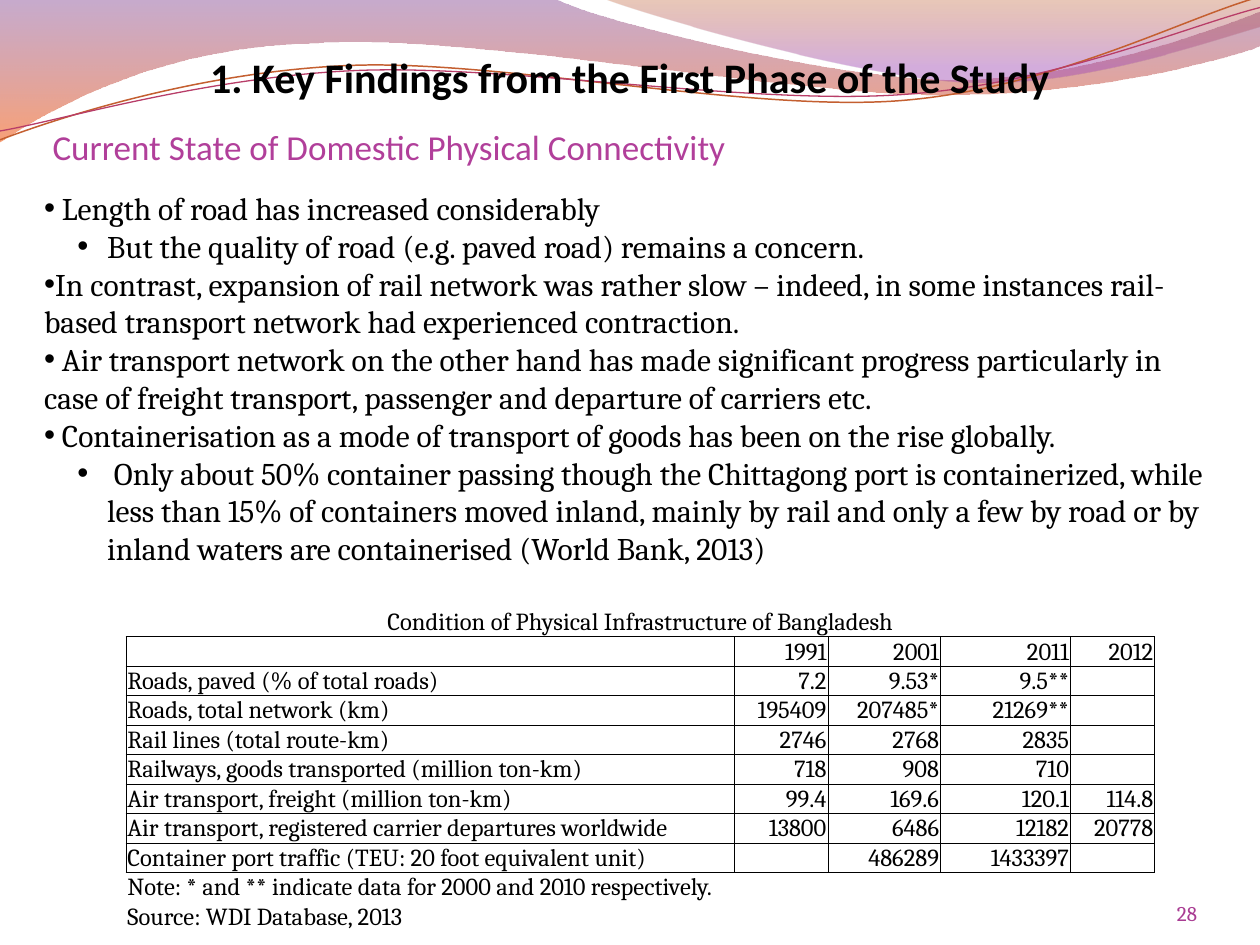
"""Build the slide on the state of domestic physical connectivity."""
import math

from lxml import etree
from pptx import Presentation
from pptx import util as u
from pptx.dml.color import RGBColor
from pptx.enum import text
from pptx.oxml.ns import qn

rgb = RGBColor.from_string
AL, ANC = text.PP_ALIGN, text.MSO_ANCHOR

prs = Presentation()
prs.slide_width, prs.slide_height = u.Cm(25.4), u.Cm(19.05)
s = prs.slides.add_slide(prs.slide_layouts[6])


def draw_outline(steps, close, turn=0, center=(0, 0)):
    """Draw points (2 numbers) and cubic curves (6 numbers), in 1/100 inch."""
    unit, (cx, cy) = u.Cm(0.0254), center
    cos, sin = math.cos(math.radians(turn)), math.sin(math.radians(turn))
    steps = [[((cx + (x - cx) * cos + (y - cy) * sin) * unit,
               (cy - (x - cx) * sin + (y - cy) * cos) * unit)
              for x, y in zip(step[::2], step[1::2])] for step in steps]
    ends = [step[-1] for step in steps]
    fb = s.shapes.build_freeform(*ends[0])
    fb.add_line_segments(ends[1:], close=close)
    sp = fb.convert_to_shape()
    path = sp._element.spPr.find(".//" + qn("a:path"))
    for node, step in zip(list(path), steps):
        if len(step) == 3:
            curve = etree.Element(qn("a:cubicBezTo"))
            for x, y in step:
                etree.SubElement(curve, qn("a:pt"), x=str(round(x - sp.left)),
                                 y=str(round(y - sp.top)))
            path.replace(node, curve)
    sp.rotation = turn
    sp.shadow.inherit = False
    return sp


def add_text(box, lines, size, font, color, align=AL.LEFT, anchor=ANC.TOP,
             margins=(0.25, 0.13, 0.25, 0.13), bold=False):
    """Add a wrapped text box with one paragraph per line."""
    sp = s.shapes.add_textbox(*map(u.Cm, box))
    tf = sp.text_frame
    tf.word_wrap, tf.vertical_anchor = True, anchor
    tf.margin_left, tf.margin_top, tf.margin_right, tf.margin_bottom = map(u.Cm, margins)
    tf.text = "\n".join(lines)
    for p in tf.paragraphs:
        p.alignment = align
        for r in p.runs:
            r.font.size, r.font.name, r.font.bold = u.Pt(size), font, bold
            r.font.color.rgb = rgb(color)
    return tf


waves = [
    ([(0, 0), (440, -1), (476, 17, 664, 63, 758, 63), (853, 63, 958, 26, 1000, 9),
      (1001, 36), (983, 44, 870, 76, 746, 75), (622, 75, 382, 28, 257, 34),
      (129, 36, 46, 83, -1, 113)],
     [(0, "834591", 45), (1, "F35307", 55)]),
    ([(479, -1), (509, 11, 682, 62, 769, 65), (856, 69, 961, 32, 1000, 21), (1000, 0)],
     [(0, "B74915", 30), (0.8, "A14BB4", 45)]),
]
for steps, stops in waves:
    sp = draw_outline(steps, True)
    sp.line.fill.background()
    sp.fill.gradient()
    sp.fill.gradient_angle = 270
    for stop, (pos, color, _) in zip(sp.fill.gradient_stops, stops):
        stop.position, stop.color.rgb = pos, rgb(color)
    for clr, (_, _, alpha) in zip(sp._element.spPr.iter(qn("a:srgbClr")), stops):
        etree.SubElement(clr, qn("a:alpha"), val=str(alpha * 1000))

strands = [
    ([(0, 111), (48, 93, 158, 57, 277, 52), (395, 47, 593, 89, 713, 80),
      (833, 71, 938, 15, 998, -2)], (499, 57), "C45F30", 0.85),
    ([(0, 104), (47, 96, 164, 61, 283, 56), (403, 51, 597, 84, 717, 75),
      (836, 67, 941, 21, 1000, 6)], (500, 59), "B83D68", 0.75),
]
for steps, center, color, width in strands:
    sp = draw_outline(steps, False, 357.3, center)
    sp.fill.background()
    sp.line.color.rgb, sp.line.width = rgb(color), u.Pt(width)

add_text((1.06, 2.54, 22.86, 0.84), ["Current State of Domestic Physical Connectivity"],
         20, "Calibri", "B13F9A", anchor=ANC.BOTTOM, margins=(0, 0.13, 0, 0))

rows = [
    ["Condition of Physical Infrastructure of Bangladesh"],
    ["", "1991", "2001", "2011", "2012"],
    ["Roads, paved (% of total roads)", "7.2", "9.53*", "9.5**", ""],
    ["Roads, total network (km)", "195409", "207485*", "21269**", ""],
    ["Rail lines (total route-km)", "2746", "2768", "2835", ""],
    ["Railways, goods transported (million ton-km)", "718", "908", "710", ""],
    ["Air transport, freight (million ton-km)", "99.4", "169.6", "120.1", "114.8"],
    ["Air transport, registered carrier departures worldwide",
     "13800", "6486", "12182", "20778"],
    ["Container port traffic (TEU: 20 foot equivalent unit)", "", "486289", "1433397", ""],
    ["Note: * and ** indicate data for 2000 and 2010 respectively."],
    ["Source: WDI Database, 2013", "", "", "", ""],
]
spans = {0: [9], 9: [9], 10: [1, 2, 2, 2, 2]}
borders = {0: "B", 9: "T", 10: ""}
widths = [11.38, 0.89, 1.45, 0.43, 1.91, 0.36, 1.98, 0.64, 1.7]
frame = s.shapes.add_table(len(rows), len(widths), u.Cm(2.54), u.Cm(12.24),
                           u.Cm(sum(widths)), u.Cm(6.81))
tb = frame.table
tb.first_row = tb.horz_banding = False
tb._tbl.tblPr.find(qn("a:tableStyleId")).text = "{2D5ABB26-0587-4C30-8999-92F81FD0307C}"
for col, width in zip(tb.columns, widths):
    col.width = u.Cm(width)
for i, row in enumerate(rows):
    tb.rows[i].height = u.Cm(0.53)
    values, j = {}, 0
    for value, span in zip(row, spans.get(i, [2, 2, 2, 2, 1])):
        values[j] = value
        if span > 1:
            tb.cell(i, j).merge(tb.cell(i, j + span - 1))
        j += span
    for j in range(len(widths)):
        c = tb.cell(i, j)
        c.margin_left = c.margin_right = u.Cm(0.03)
        c.margin_top = c.margin_bottom = 0
        c.vertical_anchor = ANC.BOTTOM
        for side in "LRTB":
            ln = etree.SubElement(c._tc.get_or_add_tcPr(), qn("a:ln" + side), w="6350")
            if side in borders.get(i, "LRTB"):
                fill = etree.SubElement(ln, qn("a:solidFill"))
                etree.SubElement(fill, qn("a:srgbClr"), val="000000")
            else:
                etree.SubElement(ln, qn("a:noFill"))
        c.fill.background()
        p = c.text_frame.paragraphs[0]
        p.text = values.get(j, "")
        p.alignment = AL.CENTER if i == 0 else AL.RIGHT if j else AL.LEFT
        for r in p.runs:
            r.font.size, r.font.name = u.Pt(14), "Cambria"
            r.font.color.rgb = rgb("000000")
        if not p.runs:
            end = etree.SubElement(p._p, qn("a:endParaRPr"), sz="1400")
            etree.SubElement(end, qn("a:latin"), typeface="Cambria")
frame.height = u.Cm(6.81)

add_text((22.02, 17.65, 2.11, 1.02), ["28"], 12, "Cambria", "A93C93",
         AL.RIGHT, ANC.BOTTOM, (0, 0, 0, 0))
add_text((1.27, 0.76, 22.86, 1.57), ["1. Key Findings from the First Phase of the Study"],
         24, "Calibri", "000000", AL.CENTER, ANC.MIDDLE, bold=True)

findings = [
    (0, " Length of road has increased considerably"),
    (1, "But the quality of road (e.g. paved road) remains a concern."),
    (0, "In contrast, expansion of rail network was rather slow – indeed, in some instances "
        "rail-based transport network had experienced contraction."),
    (0, " Air transport network on the other hand has made significant progress particularly "
        "in case of freight transport, passenger and departure of carriers etc."),
    (0, " Containerisation as a mode of transport of goods has been on the rise globally."),
    (1, " Only about 50% container passing though the Chittagong port is containerized, while "
        "less than 15% of containers moved inland, mainly by rail and only a few by road or by "
        "inland waters are containerised (World Bank, 2013)"),
]
tf = add_text((0.64, 3.68, 24.13, 7.95), [line for _, line in findings],
              18, "Cambria", "000000")
for p, (level, _) in zip(tf.paragraphs, findings):
    p.level = level
    pPr = p._p.get_or_add_pPr()
    pPr.set("marL", str(u.Cm(1.27 * level)))
    pPr.set("indent", str(u.Cm(-0.6 * level)))
    etree.SubElement(pPr, qn("a:buFont"), typeface="Arial")
    etree.SubElement(pPr, qn("a:buChar"), char="•")

prs.save("out.pptx")
